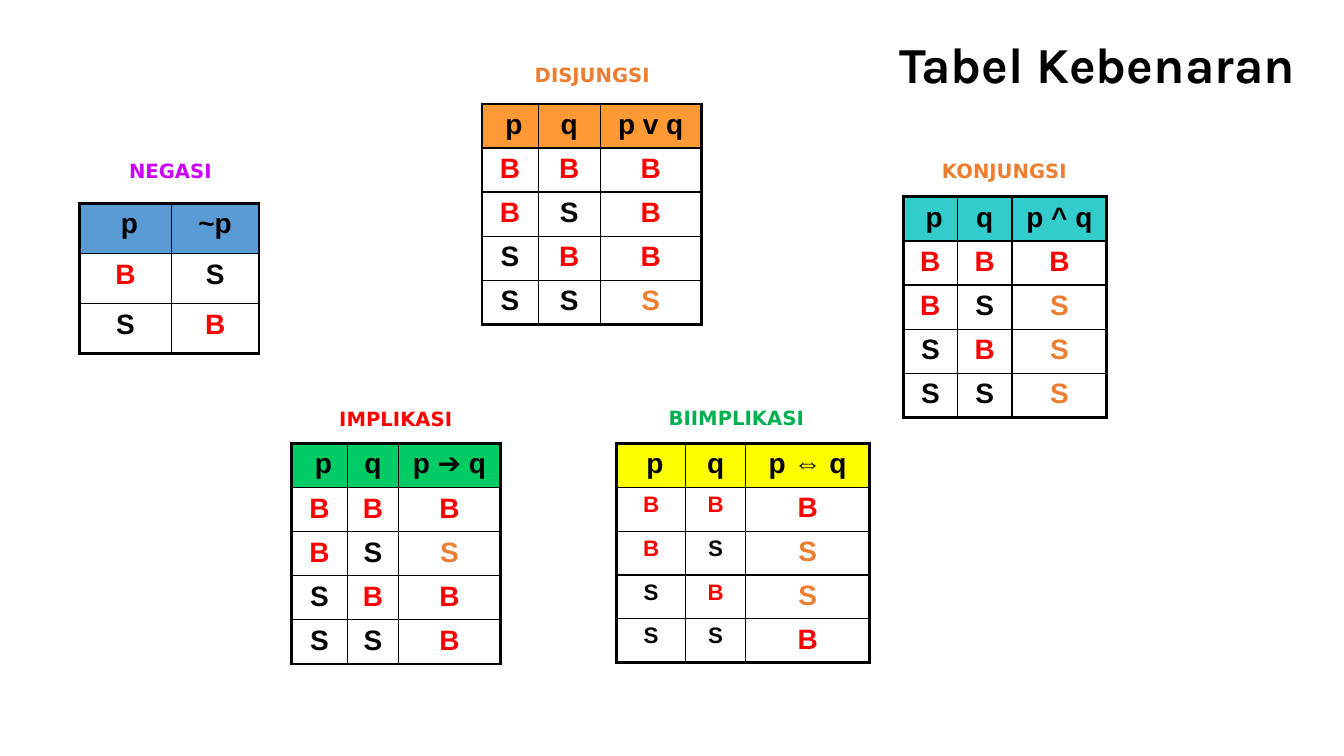
import itertools

import lxml.etree
import pptx
import pptx.dml.color
import pptx.enum.text
import pptx.oxml.ns
import pptx.util

Pt = pptx.util.Pt
Align = pptx.enum.text.PP_ALIGN

BLACK, RED, ORANGE = "000000", "FF0000", "ED7D31"


def colour(value):
    return pptx.dml.color.RGBColor.from_string(value)


def write(frame, text, font="Arial", size=20, color=BLACK, align=Align.CENTER, spacing=None):
    para = frame.paragraphs[0]
    para.alignment = align
    para.space_before = Pt(0)
    if spacing:
        para.line_spacing = spacing
    span = para.add_run()
    span.text = text
    span.font.name = font
    span.font.size = Pt(size)
    span.font.bold = True
    span.font.color.rgb = colour(color)


class TruthTablePage:
    title_font = "Karla"
    label_font = "DejaVu Sans"
    outer_line, inner_line = 2.25, 1

    def __init__(self, deck):
        self.page = deck.slides.add_slide(deck.slide_layouts[5])

    def title(self, text, left, top, width, height):
        box = self.page.shapes.title
        box.left, box.top, box.width, box.height = map(Pt, (left, top, width, height))
        frame = box.text_frame
        frame.word_wrap = True
        frame.vertical_anchor = pptx.enum.text.MSO_ANCHOR.MIDDLE
        write(frame, text, font=self.title_font, size=36, align=Align.RIGHT, spacing=0.9)

    def label(self, text, left, top, width, color):
        box = self.page.shapes.add_textbox(Pt(left), Pt(top), Pt(width), Pt(24))
        frame = box.text_frame
        frame.word_wrap = True
        frame.auto_size = pptx.enum.text.MSO_AUTO_SIZE.SHAPE_TO_FIT_TEXT
        write(frame, text, font=self.label_font, size=14, color=color)

    def borders(self, cell, outer_sides):
        properties = cell._tc.get_or_add_tcPr()
        for index, side in enumerate("LRTB"):
            width = self.outer_line if side in outer_sides else self.inner_line
            line = lxml.etree.Element(pptx.oxml.ns.qn("a:ln" + side), w=str(int(Pt(width))))
            fill = lxml.etree.SubElement(line, pptx.oxml.ns.qn("a:solidFill"))
            lxml.etree.SubElement(fill, pptx.oxml.ns.qn("a:srgbClr"), val=BLACK)
            properties.insert(index, line)

    def truth_table(self, formula, results, left, top, widths, row_height, fill,
                    false_color=ORANGE, operand_size=20):
        operands = len(widths) - 1
        cases = itertools.product("BS", repeat=operands)
        rows = [[" p", "q"][:operands] + [formula]]
        rows += [[*case, result] for case, result in zip(cases, results)]
        last_row = len(rows) - 1
        table = self.page.shapes.add_table(
            len(rows), len(widths), Pt(left), Pt(top), Pt(sum(widths)), Pt(row_height * len(rows))
        ).table
        table.horz_banding = False
        for column, width in zip(table.columns, widths):
            column.width = Pt(width)
        for row_index, values in enumerate(rows):
            table.rows[row_index].height = Pt(row_height)
            for column_index, value in enumerate(values):
                cell = table.cell(row_index, column_index)
                is_result = column_index == operands
                color, size = BLACK, 20
                if row_index == 0:
                    cell.fill.solid()
                    cell.fill.fore_color.rgb = colour(fill)
                else:
                    cell.fill.background()
                    color = RED if value == "B" else false_color if is_result else BLACK
                    size = 20 if is_result else operand_size
                write(cell.text_frame, value, size=size, color=color)
                edges = {"L": column_index == 0, "R": is_result,
                         "T": row_index == 0, "B": row_index == last_row}
                self.borders(cell, [side for side, outer in edges.items() if outer])


def main():
    deck = pptx.Presentation()
    deck.slide_width, deck.slide_height = Pt(960), Pt(540)
    page = TruthTablePage(deck)
    page.title("Tabel Kebenaran", 177.8, 15.1, 754.6, 65.5)

    page.label("NEGASI", 81.4, 110.2, 80.6, "CC00FF")
    page.truth_table("~p", "SB", 56.9, 145.4, [65.5, 62.6], 35.8, "5B9BD5", false_color=BLACK)

    page.label("DISJUNGSI", 365.8, 41.4, 114.5, ORANGE)
    page.truth_table("p v q", "BBBS", 344.2, 74.2, [40.3, 44.2, 72.3], 31.5, "FF9933")

    page.label("KONJUNGSI", 660.2, 110.2, 114.5, ORANGE)
    page.truth_table("p ^ q", "BSSS", 645.1, 140.6, [38.9, 38.9, 67.7], 31.5, "33CCCC")

    page.label("IMPLIKASI", 225.4, 287.3, 114.5, RED)
    page.truth_table("p ➔ q", "BSBB", 208.1, 316.8, [40.3, 36, 73.4], 31.5, "00CC66")

    page.label("BIIMPLIKASI", 445.7, 286.6, 160.6, "00B050")
    page.truth_table("p ⇔ q", "BSSB", 440.6, 316.8, [49, 43.2, 88.3], 31.3, "FFFF00",
                     operand_size=16)

    deck.save("out.pptx")


if __name__ == "__main__":
    main()
